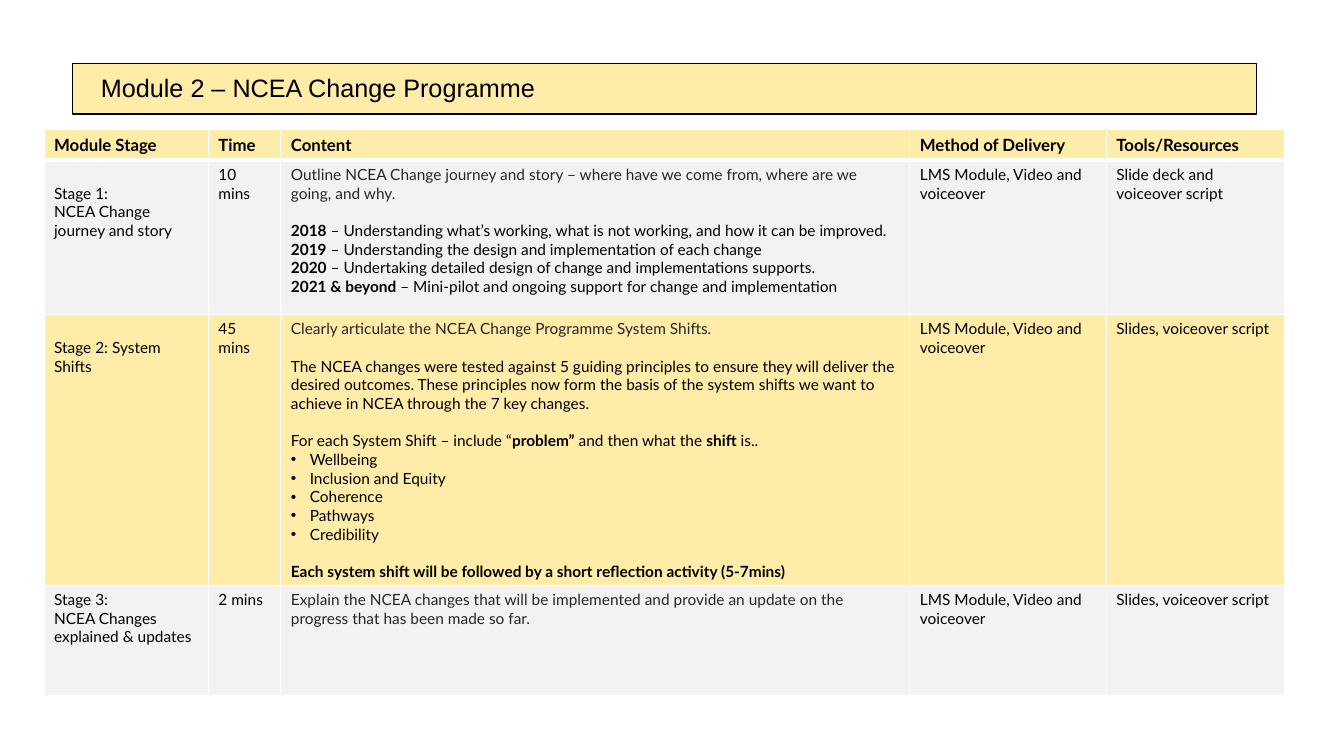
from dataclasses import dataclass
from typing import Any

from lxml import etree
from pptx import Presentation
from pptx.dml.color import RGBColor
from pptx.enum import shapes, text
from pptx.oxml import ns
from pptx.util import Pt

BLACK = RGBColor(0x00, 0x00, 0x00)
DARK = RGBColor(0x26, 0x26, 0x26)
WHITE = RGBColor(0xFF, 0xFF, 0xFF)
GOLD = RGBColor(0xFF, 0xEC, 0xA9)
GREY = RGBColor(0xF2, 0xF2, 0xF2)

TITLE = "Module 2 – NCEA Change Programme"
HEADS = ("Module Stage", "Time", "Content", "Method of Delivery", "Tools/Resources")
WIDTHS = (117.4, 51.8, 449.3, 140.4, 127.4)
LINE = 13.4
INSET = 3.6
INDENT = 13.5
MODE = "LMS Module, Video and voiceover"
SLIDES = "Slides, voiceover script"


@dataclass
class Para:
    words: str
    color: RGBColor = BLACK
    gap: bool = False
    dot: bool = False


@dataclass
class Stage:
    name: list[Para]
    time: str
    content: list[Para]
    tools: str
    fill: RGBColor
    height: float
    drop: bool = True

    def cells(self) -> list[list[Para]]:
        return [self.name, [Para(self.time)], self.content, [Para(MODE)], [Para(self.tools)]]


STAGES = (
    Stage(
        [Para("Stage 1:"), Para("NCEA Change journey and story")],
        "10 mins",
        [
            Para("Outline NCEA Change journey and story – where have we come from, "
                 "where are we going, and why.", DARK),
            Para("*2018* – Understanding what’s working, what is not working, "
                 "and how it can be improved.", gap=True),
            Para("*2019* – Understanding the design and implementation of each change"),
            Para("*2020* – Undertaking detailed design of change and implementations supports."),
            Para("*2021 & beyond *– Mini-pilot and ongoing support for change and implementation"),
        ],
        "Slide deck and voiceover script", GREY, 110.2,
    ),
    Stage(
        [Para("Stage 2: System Shifts")],
        "45 mins",
        [
            Para("Clearly articulate the NCEA Change Programme System Shifts.", DARK),
            Para("The NCEA changes were tested against 5 guiding principles to ensure they will "
                 "deliver the desired outcomes. These principles now form the basis of the system "
                 "shifts we want to achieve in NCEA through the 7 key changes.", gap=True),
            Para("For each System Shift – include “*problem”* and then what the *shift* is..",
                 gap=True),
            *(Para(shift, dot=True) for shift in
              ("Wellbeing", "Inclusion and Equity", "Coherence", "Pathways", "Credibility")),
            Para("*Each system shift will be followed by a short reflection activity (5-7mins)*",
                 gap=True),
        ],
        SLIDES, GOLD, 193.6,
    ),
    Stage(
        [Para("Stage 3:"), Para("NCEA Changes explained & updates")],
        "2 mins",
        [Para("Explain the NCEA changes that will be implemented and provide an update on the "
              "progress that has been made so far.", DARK)],
        SLIDES, GREY, 78.5, drop=False,
    ),
)


def apply(item: Any, form: dict[str, Any]) -> None:
    for key, value in form.items():
        setattr(item, key, value)


def add_run(para: Any, words: str, name: str, size: float, color: RGBColor, bold: bool) -> None:
    run = para.add_run()
    run.text = words
    apply(run.font, {"name": name, "size": Pt(size), "bold": bold})
    run.font.color.rgb = color


def add_dot(para: Any) -> None:
    props = para._p.get_or_add_pPr()
    props.set("marL", str(Pt(INDENT)))
    props.set("indent", str(-Pt(INDENT)))
    etree.SubElement(props, ns.qn("a:buFont")).set("typeface", "Arial")
    etree.SubElement(props, ns.qn("a:buChar")).set("char", "•")


def add_edges(cell: Any, top: float, low: float) -> None:
    props = cell._tc.get_or_add_tcPr()
    for side, width in (("L", 1), ("R", 1), ("T", top), ("B", low)):
        edge = etree.SubElement(props, ns.qn(f"a:ln{side}"), w=str(Pt(width)))
        fill = etree.SubElement(edge, ns.qn("a:solidFill"))
        etree.SubElement(fill, ns.qn("a:srgbClr")).set("val", str(WHITE))


def fill_cell(cell: Any, paras: list[Para], fill: RGBColor, size: float) -> None:
    cell.fill.solid()
    cell.fill.fore_color.rgb = fill
    frame = cell.text_frame
    for place, item in enumerate(paras):
        para = frame.add_paragraph() if place else frame.paragraphs[0]
        para.space_before = Pt(LINE if item.gap else 0)
        if item.dot:
            add_dot(para)
        for turn, part in enumerate(item.words.split("*")):
            if part:
                add_run(para, part, "Lato", size, item.color, turn % 2 == 1)


def add_title(slide: Any) -> None:
    bar = slide.shapes.add_shape(
        shapes.MSO_SHAPE.RECTANGLE, Pt(51.6), Pt(45.4), Pt(846), Pt(36))
    bar.shadow.inherit = False
    bar.fill.solid()
    bar.fill.fore_color.rgb = GOLD
    bar.line.color.rgb = BLACK
    bar.line.width = Pt(1)
    box = slide.shapes.add_textbox(Pt(65), Pt(45.6), Pt(812.2), Pt(36))
    apply(box.text_frame, {"word_wrap": True, "vertical_anchor": text.MSO_ANCHOR.MIDDLE})
    para = box.text_frame.paragraphs[0]
    para.line_spacing = 0.9
    add_run(para, TITLE, "Arial", 18, BLACK, False)


def add_plan(slide: Any) -> None:
    heights = (20.2, *(stage.height for stage in STAGES))
    table = slide.shapes.add_table(
        len(heights), len(WIDTHS), Pt(31.4), Pt(92.7), Pt(sum(WIDTHS)), Pt(sum(heights))).table
    table.horz_banding = False
    for column, width in zip(table.columns, WIDTHS):
        column.width = Pt(width)
    for row, height in zip(table.rows, heights):
        row.height = Pt(height)
    for col, head in enumerate(HEADS):
        add_edges(table.cell(0, col), 1, 3)
        fill_cell(table.cell(0, col), [Para(f"*{head}*")], GOLD, 12)
    for row, stage in enumerate(STAGES, 1):
        for col, paras in enumerate(stage.cells()):
            add_edges(table.cell(row, col), 3 if row == 1 else 1, 1)
            fill_cell(table.cell(row, col), paras, stage.fill, 11)
        if stage.drop:
            table.cell(row, 0).margin_top = Pt(INSET + LINE)


def main() -> None:
    deck = Presentation()
    apply(deck, {"slide_width": Pt(960), "slide_height": Pt(540)})
    slide = deck.slides.add_slide(deck.slide_layouts[6])
    add_title(slide)
    add_plan(slide)
    deck.save("out.pptx")


if __name__ == "__main__":
    main()
